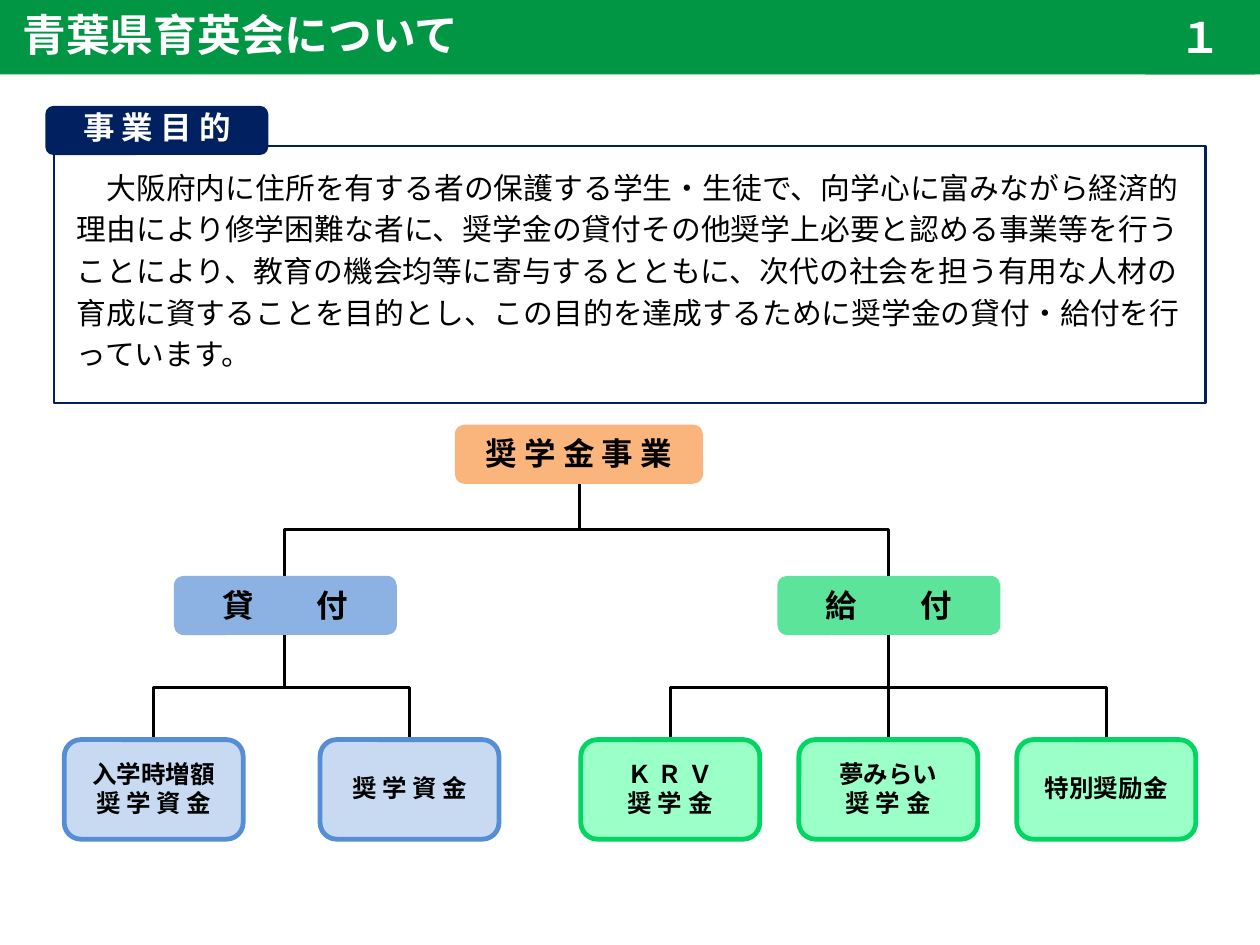
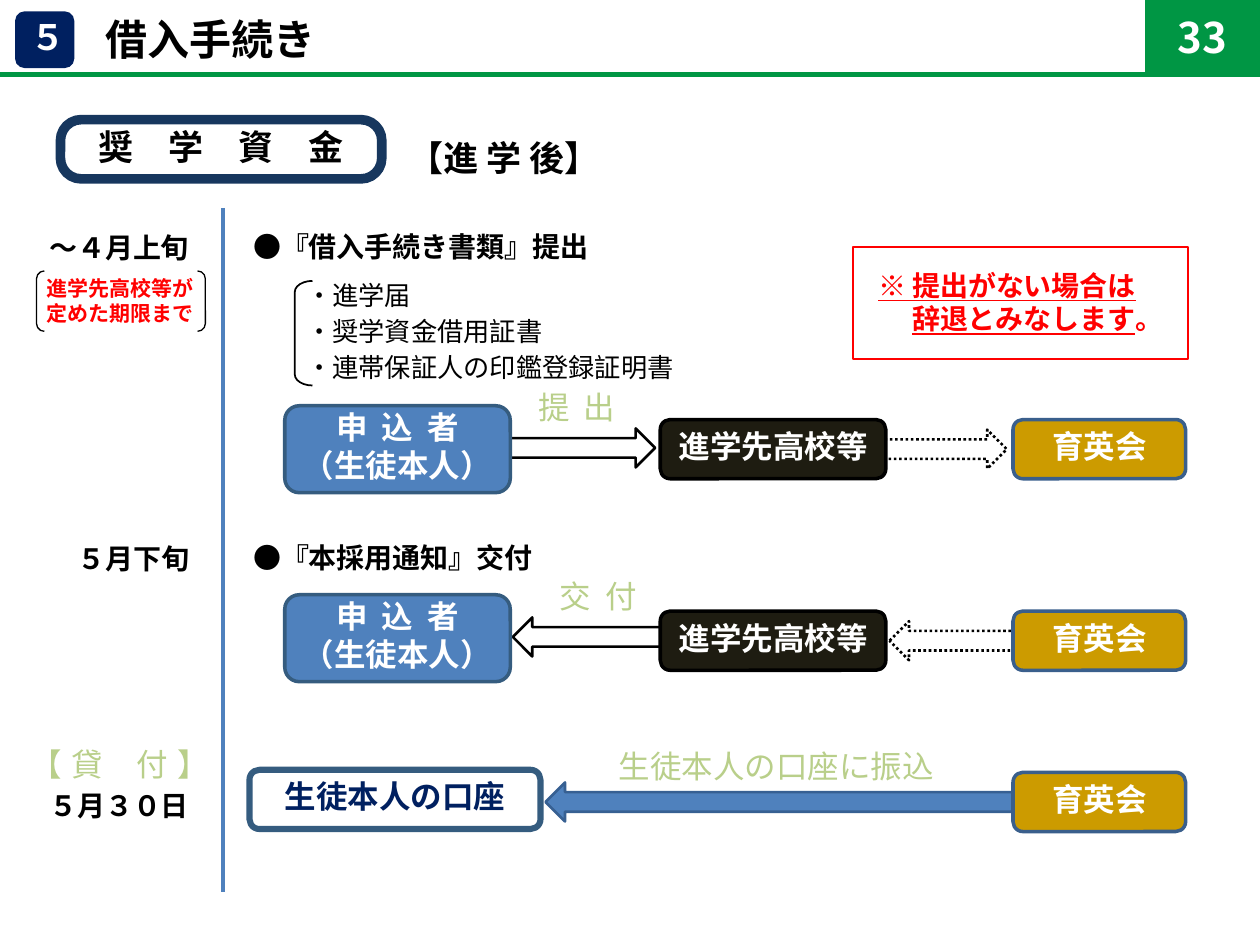
from lxml import etree
from pptx import Presentation
from pptx.dml.color import RGBColor
from pptx.enum.dml import MSO_LINE as Dash
from pptx.enum.shapes import MSO_CONNECTOR as Link, MSO_SHAPE as Kind
from pptx.enum.text import MSO_ANCHOR as Anchor, PP_ALIGN as Align
from pptx.oxml.ns import qn
from pptx.util import Inches, Pt

FONT = "Noto Sans CJK JP"
GREEN, NAVY, BLUE = "009644", "002060", "4F81BD"
WHITE, BLACK, RED, PALE = "FFFFFF", "000000", "FF0000", "B9CF8A"
ROUND = Kind.ROUNDED_RECTANGLE


def paint(hue):
    """Turn a hex string into a colour."""
    return RGBColor.from_string(hue)


def space(run, gap):
    """Set the letter spacing of a run in points."""
    run._r.get_or_add_rPr().set("spc", str(round(gap * 100)))


def style(frame, size, hue=BLACK, bold=True, align=Align.CENTER, pitch=1.2, gap=0):
    """Format every paragraph and run of a text frame."""
    for para in frame.paragraphs:
        para.alignment = align
        para.line_spacing = Pt(size * pitch)
        for run in para.runs:
            font = run.font
            font.size, font.bold, font.name = Pt(size), bold, FONT
            font.color.rgb = paint(hue)
            etree.SubElement(run._r.get_or_add_rPr(), qn("a:ea"), typeface=FONT)
            if gap:
                space(run, gap)


def fit(frame, inset):
    """Set wrapping, middle anchor and insets of a text frame."""
    frame.word_wrap = True
    frame.vertical_anchor = Anchor.MIDDLE
    (frame.margin_left, frame.margin_top,
     frame.margin_right, frame.margin_bottom) = map(Inches, inset)


def shape(slide, kind, at, fill=None, line=None, wide=1, dash=None, alpha=None):
    """Add a preset shape without shadow."""
    item = slide.shapes.add_shape(kind, *map(Inches, at))
    item.shadow.inherit = False
    if fill:
        item.fill.solid()
        item.fill.fore_color.rgb = paint(fill)
        if alpha:
            tint = item._element.spPr.find(".//" + qn("a:srgbClr"))
            etree.SubElement(tint, qn("a:alpha"), val=str(alpha * 1000))
    else:
        item.fill.background()
    if line:
        item.line.color.rgb = paint(line)
        item.line.width = Pt(wide)
        if dash:
            item.line.dash_style = dash
    else:
        item.line.fill.background()
    return item


def card(slide, at, text, size, fill, hue=BLACK, kind=ROUND, gap=0, head=0.0, **look):
    """Add a shape with bold centred text."""
    item = shape(slide, kind, at, fill, **look)
    fit(item.text_frame, (0.1, head, 0.1, 0.05))
    item.text_frame.text = text
    style(item.text_frame, size, hue, gap=gap)
    return item


def note(slide, at, text, size, hue=BLACK, **look):
    """Add a text box without insets."""
    frame = slide.shapes.add_textbox(*map(Inches, at)).text_frame
    fit(frame, (0, 0, 0, 0))
    frame.text = text
    style(frame, size, hue, **look)
    return frame


def wire(slide, kind, ends, hue=BLACK, wide=1.75):
    """Add a connector without shadow."""
    item = slide.shapes.add_connector(kind, *map(Inches, ends))
    item.line.color.rgb = paint(hue)
    item.line.width = Pt(wide)
    etree.SubElement(item._element.spPr, qn("a:effectLst"))
    return item


def branch(slide, top, foot):
    """Join a parent's foot to a child's top with a vertical elbow."""
    (x1, y1), (x2, y2) = top, foot
    x, y = (x1 + x2) / 2, (y1 + y2) / 2
    tall, shift = (y2 - y1) / 2, (x1 - x2) / 2
    if abs(shift) < 0.01:
        wire(slide, Link.STRAIGHT, (x, y, x, y2))
        return
    item = wire(slide, Link.ELBOW, (x - tall, y - shift, x + tall, y + shift))
    item._element.spPr.find(qn("a:xfrm")).set("rot", "5400000")


def page(slide, left, text, **look):
    """Add the green page number block."""
    card(slide, (left, 0, 0.87, 0.59), text, 24, GREEN, WHITE, Kind.RECTANGLE,
         head=0.04, **look)


def purpose(slide, x, y):
    """Add the framed statement of purpose with its tab."""
    edge = shape(slide, ROUND, (x + 0.07, y + 0.32, 9.14, 2.04), line=NAVY, wide=1.5)
    edge.adjustments[0] = 0
    body = note(slide, (x + 0.25, y + 0.46, 8.9, 1.65), "\n".join((
        "大阪府内に住所を有する者の保護する学生・生徒で、向学心に富みながら経済的",
        "理由により修学困難な者に、奨学金の貸付その他奨学上必要と認める事業等を行う",
        "ことにより、教育の機会均等に寄与するとともに、次代の社会を担う有用な人材の",
        "育成に資することを目的とし、この目的を達成するために奨学金の貸付・給付を行",
        "っています。")), 17, bold=False, align=Align.LEFT, pitch=1.4)
    first = body.paragraphs[0]._p.get_or_add_pPr()
    first.set("indent", str(Pt(17)))
    card(slide, (x, y, 1.77, 0.39), "事 業 目 的", 18, NAVY, WHITE)


def tree(slide, x, y):
    """Add the chart of scholarship programmes."""
    root = x + 4.09
    groups = (
        ("貸　付", x + 1.75, "558ED5", 68, "C7DAF1",
         ((0.71, "入学時増額\n奨 学 資 金"), (2.74, "奨 学 資 金"))),
        ("給　付", x + 6.54, "00D661", 64, "9BFFC8",
         ((4.81, "Ｋ Ｒ Ｖ\n奨 学 金"), (6.54, "夢みらい\n奨 学 金"), (8.27, "特別奨励金"))))
    for name, mid, edge, alpha, fill, leaves in groups:
        branch(slide, (root, y + 0.47), (mid, y + 1.2))
        card(slide, (mid - 0.88, y + 1.2, 1.77, 0.47), name, 18, edge, alpha=alpha,
             gap=9, head=0.04)
        for spot, text in leaves:
            branch(slide, (mid, y + 1.67), (x + spot, y + 2.5))
            card(slide, (x + spot - 0.71, y + 2.5, 1.42, 0.79), text, 14, fill,
                 line=edge, wide=2.75, head=0.03)
    card(slide, (root - 0.99, y, 1.97, 0.47), "奨 学 金 事 業", 18, "F68426", alpha=60,
         head=0.03)


def about(slide):
    """Build the slide about the foundation."""
    band = shape(slide, Kind.RECTANGLE, (0, 0, 10, 0.59), GREEN)
    frame = band.text_frame
    fit(frame, (0.18, 0, 0.1, 0.05))
    frame.text = "青葉県育英会について"
    style(frame, 25, WHITE, align=Align.LEFT)
    page(slide, 9.09, "１")
    purpose(slide, 0.36, 0.84)
    tree(slide, 0.51, 3.37)


def header(slide):
    """Add the numbered heading, rule and page number."""
    card(slide, (0.12, 0.09, 0.47, 0.45), "５", 20, NAVY, WHITE)
    note(slide, (0.84, 0.06, 4.2, 0.49), "借入手続き", 24, align=Align.LEFT)
    wire(slide, Link.STRAIGHT, (0, 0.59, 10, 0.59), GREEN, 3)
    page(slide, 9.11, "33", line=GREEN, wide=3)


def union(slide, y):
    """Add the foundation's box."""
    card(slide, (8.04, y, 1.37, 0.47), "育英会", 18, "CC9B00", WHITE, line="3A5F8C", wide=2)


def flow(slide, y, drop, kind, spans):
    """Add one row from applicant through school to foundation."""
    for (left, right, top), dash in zip(spans, (None, Dash.ROUND_DOT)):
        shape(slide, kind, (left, top, right - left, 0.31), WHITE, BLACK, 1.5, dash)
    who = card(slide, (2.26, y, 1.79, 0.69), "申 込 者\n（生徒本人）", 18, BLUE, WHITE,
               line="355C7F", wide=2)
    for run in who.text_frame.paragraphs[0].runs:
        space(run, 2)
    card(slide, (5.24, y + drop, 1.79, 0.47), "進学先高校等", 18, "1E1C11", WHITE,
         line=BLACK, wide=2)
    union(slide, y + drop)


def dates(slide, x):
    """Add the column of dates and its rule."""
    wire(slide, Link.STRAIGHT, (1.77, 1.65, 1.77, 7.08), BLUE, 2.25)
    for y, text in ((1.78, "～４月上旬"), (4.25, "５月下旬"), (6.21, "５月３０日")):
        note(slide, (x, y, 1.31, 0.37), text, 16, align=Align.RIGHT)
    note(slide, (x + 0.09, 2.15, 1.34, 0.47), "進学先高校等が\n定めた期限まで", 12, RED)
    pair = shape(slide, Kind.DOUBLE_BRACKET, (x + 0.1, 2.15, 1.34, 0.48), line=BLACK, wide=0.75)
    pair.adjustments[0] = 0.13


def papers(slide, x, y):
    """Add the bracketed list of papers."""
    brace = shape(slide, Kind.LEFT_BRACKET, (x, y, 0.14, 0.83), line=BLACK)
    brace.adjustments[0] = 0.62
    note(slide, (x + 0.09, y - 0.05, 4.3, 0.86),
         "・進学届\n・奨学資金借用証書\n・連帯保証人の印鑑登録証明書",
         15, bold=False, align=Align.LEFT, pitch=1.37)


def warning(slide, at):
    """Add the red notice with underlined text."""
    frame = shape(slide, Kind.RECTANGLE, at, line=RED, wide=0.7).text_frame
    fit(frame, (0.2, 0.03, 0.1, 0.05))
    frame.text = "※ 提出がない場合は\n辞退とみなします"
    first, last = frame.paragraphs
    for para in (first, last):
        para.runs[0].font.underline = True
    last.add_run().text = "。"
    last._p.get_or_add_pPr().set("marL", str(Inches(0.27)))
    style(frame, 16, RED, align=Align.LEFT)


def steps(slide):
    """Build the slide on the loan procedure."""
    header(slide)
    pill = card(slide, (0.48, 0.95, 2.55, 0.47), "奨　学　資　金", 20, WHITE,
                line="17375E", wide=5.5, head=0.01)
    pill.adjustments[0] = 0.35
    note(slide, (3.24, 1.04, 2.9, 0.42), "【進 学 後】", 20, align=Align.LEFT)
    dates(slide, 0.19)
    for y, text in ((1.77, "●『借入手続き書類』提出"), (4.24, "●『本採用通知』交付")):
        note(slide, (2.01, y, 3.2, 0.37), text, 16, align=Align.LEFT)
    papers(slide, 2.34, 2.23)
    warning(slide, (6.77, 1.96, 2.66, 0.89))
    flow(slide, 3.22, 0.11, Kind.RIGHT_ARROW, ((3.98, 5.2, 3.4), (6.77, 7.99, 3.41)))
    flow(slide, 4.72, 0.13, Kind.LEFT_ARROW, ((4.07, 5.3, 4.9), (7.06, 8.1, 4.93)))
    shape(slide, Kind.LEFT_ARROW, (4.33, 6.21, 3.77, 0.31), BLUE, "376092", 1.5)
    card(slide, (1.98, 6.11, 2.31, 0.47), "生徒本人の口座", 18, None, NAVY,
         line="355C7F", wide=3.5)
    union(slide, 6.13)
    for x, y, text, gap in ((4.58, 3.22, "提 出", 2), (4.75, 4.72, "交 付", 2),
                            (6.16, 6.07, "生徒本人の口座に振込", 0),
                            (0.95, 6.05, "【 貸　付 】", 0.7)):
        wide = 2.8 if len(text) > 8 else 1.6
        note(slide, (x - wide / 2, y - 0.17, wide, 0.36), text, 18, PALE,
             bold=False, gap=gap)


def main():
    """Build and save the deck."""
    deck = Presentation()
    deck.slide_width, deck.slide_height = Inches(10), Inches(7.5)
    for build in (about, steps):
        build(deck.slides.add_slide(deck.slide_layouts[6]))
    deck.save("out.pptx")


if __name__ == "__main__":
    main()
